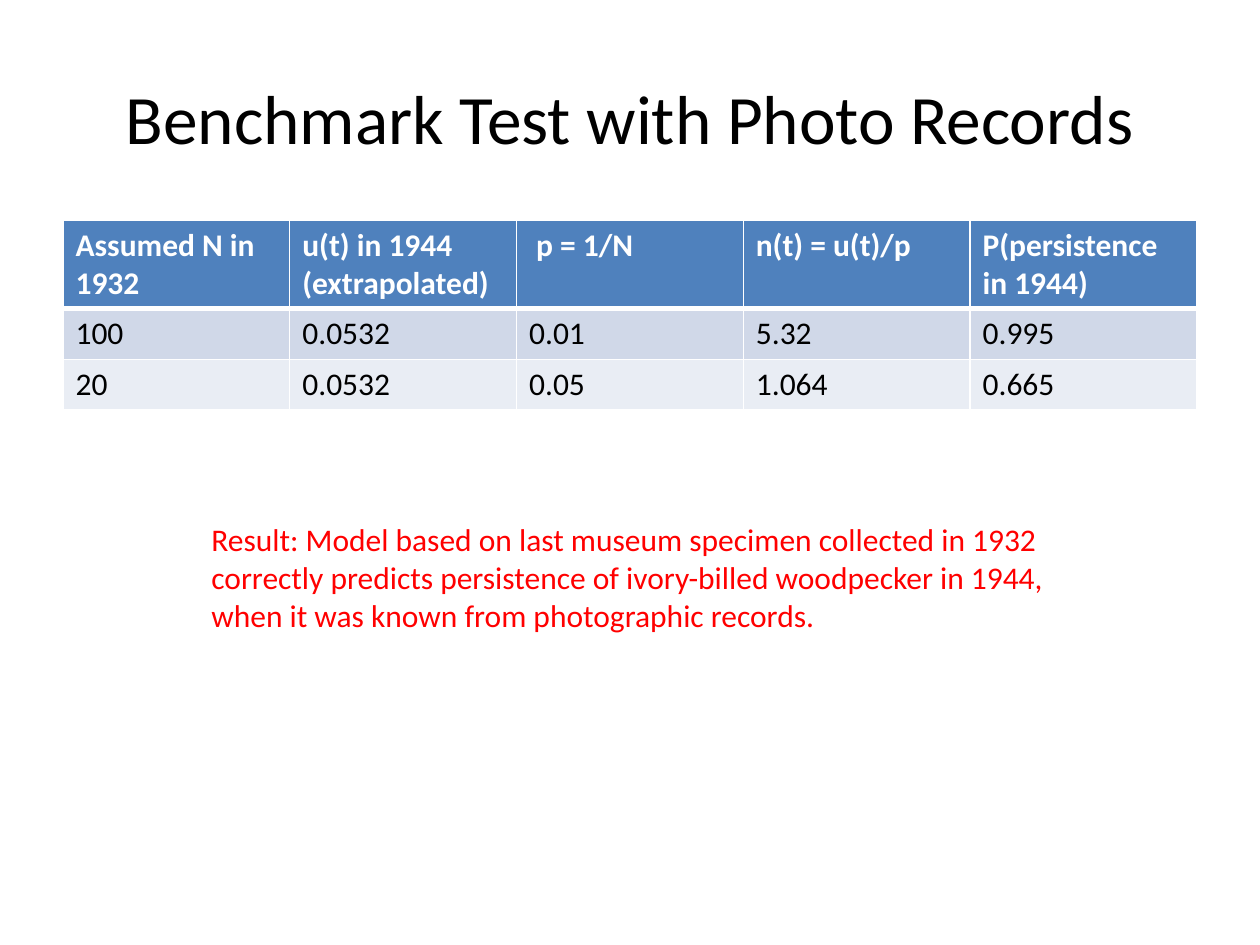
from lxml.etree import SubElement
from pptx import Presentation
from pptx.dml.color import RGBColor
from pptx.enum.text import MSO_ANCHOR, PP_ALIGN
from pptx.oxml.ns import qn
from pptx.util import Emu, Pt

PX = 914400 // 126
FONT = "Calibri"
COLORS = {
    "white": "FFFFFF",
    "black": "000000",
    "header": "4F81BD",
    "bands": ("D0D8E8", "E9EDF4"),
    "result": "FF0000",
}
RECORDS = [
    ("Assumed N in 1932", "u(t) in 1944 (extrapolated)", " p = 1/N",
     "n(t) = u(t)/p", "P(persistence in 1944)"),
    ("100", "0.0532", "0.01", "5.32", "0.995"),
    ("20", "0.0532", "0.05", "1.064", "0.665"),
]


def px(length):
    return Emu(length * PX)


def write(frame, text, size, color, bold=False, align=PP_ALIGN.LEFT):
    frame.text = text
    paragraph = frame.paragraphs[0]
    paragraph.alignment = align
    font = paragraph.font
    font.name, font.size, font.bold = FONT, Pt(size), bold
    font.color.rgb = RGBColor.from_string(color)


def add_text(slide, box, text, size, color, align=PP_ALIGN.LEFT,
             anchor=MSO_ANCHOR.TOP):
    frame = slide.shapes.add_textbox(*map(px, box)).text_frame
    frame.word_wrap = True
    frame.vertical_anchor = anchor
    write(frame, text, size, color, align=align)


def add_borders(cell, widths):
    properties = cell._tc.get_or_add_tcPr()
    for side, width in widths.items():
        line = SubElement(properties, qn(f"a:ln{side}"), w=str(Pt(width)))
        fill = SubElement(line, qn("a:solidFill"))
        SubElement(fill, qn("a:srgbClr"), val=COLORS["white"])


def add_records_table(slide, box, row_heights):
    table = slide.shapes.add_table(
        len(RECORDS), len(RECORDS[0]), *map(px, box)).table
    for row, height in zip(table.rows, row_heights):
        row.height = px(height)
    for r, record in enumerate(RECORDS):
        is_header = r == 0
        fill = COLORS["header"] if is_header else COLORS["bands"][(r - 1) % 2]
        ink = COLORS["white"] if is_header else COLORS["black"]
        # A heavier rule separates the header from the body
        widths = {"L": 1, "R": 1, "T": 3 if r == 1 else 1,
                  "B": 3 if is_header else 1}
        for c, value in enumerate(record):
            cell = table.cell(r, c)
            add_borders(cell, widths)
            cell.fill.solid()
            cell.fill.fore_color.rgb = RGBColor.from_string(fill)
            write(cell.text_frame, value, 18, ink, bold=is_header)


def main():
    presentation = Presentation()
    presentation.slide_width, presentation.slide_height = px(1260), px(945)
    slide = presentation.slides.add_slide(presentation.slide_layouts[6])

    # Title
    add_text(slide, (63, 38, 1134, 157), "Benchmark Test with Photo Records",
             39.6, COLORS["black"], PP_ALIGN.CENTER, MSO_ANCHOR.MIDDLE)

    # Benchmark records
    add_records_table(slide, (63, 220, 1134, 190), (88, 51, 51))

    # Result
    add_text(slide, (199, 514, 861, 127),
             "Result: Model based on last museum specimen collected in 1932 "
             "correctly predicts persistence of ivory-billed woodpecker in "
             "1944, when it was known from photographic records.",
             18, COLORS["result"])

    presentation.save("out.pptx")


if __name__ == "__main__":
    main()
